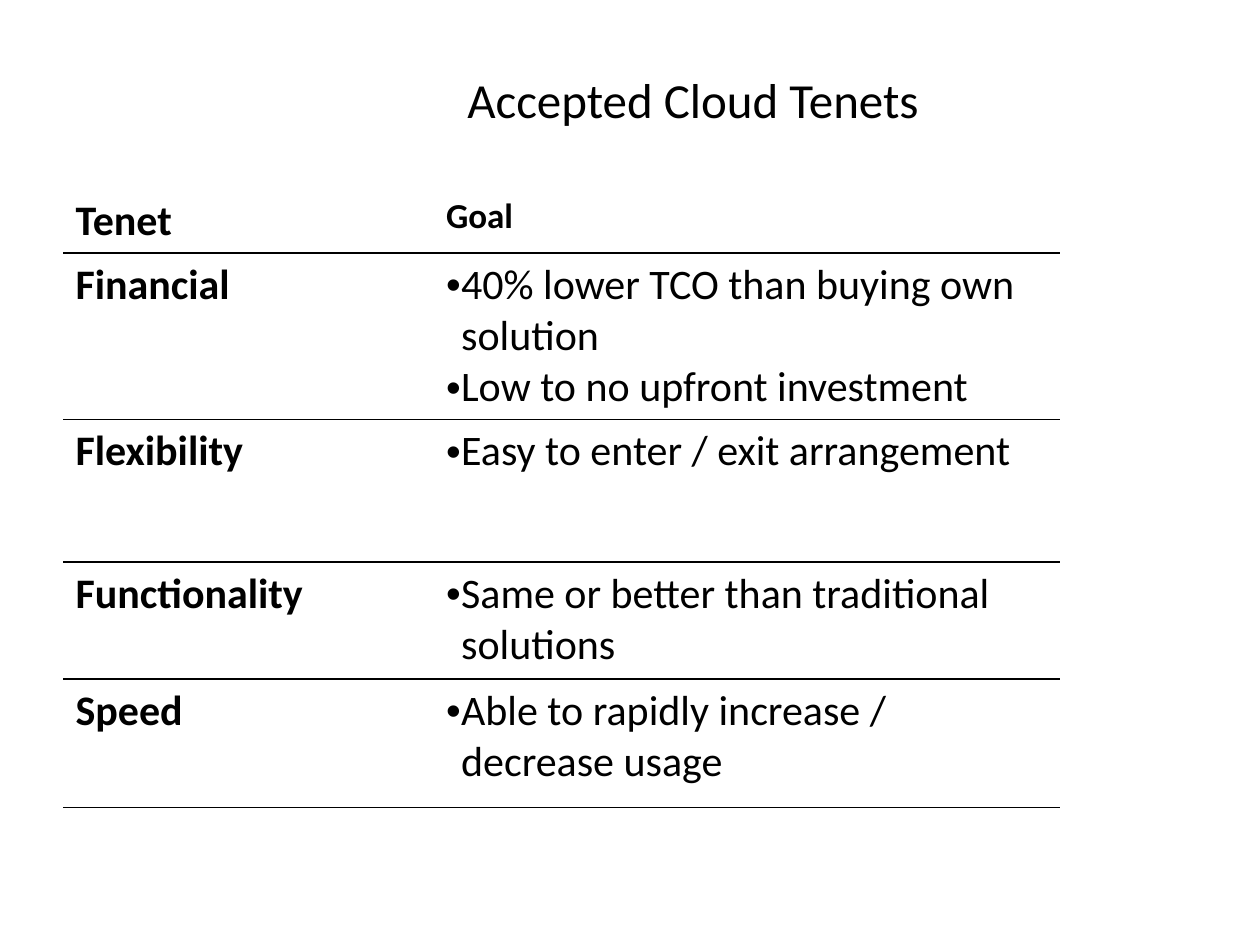
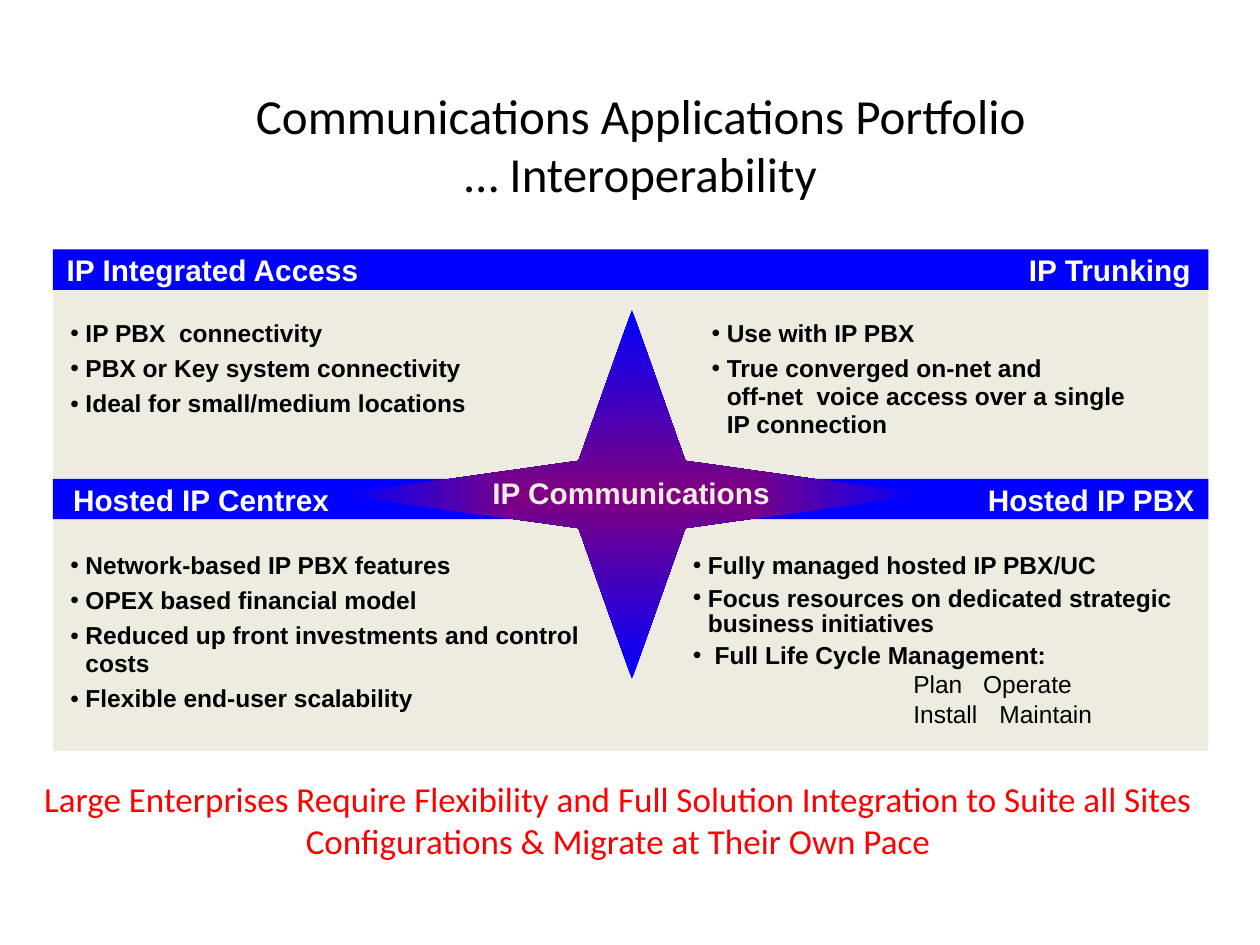
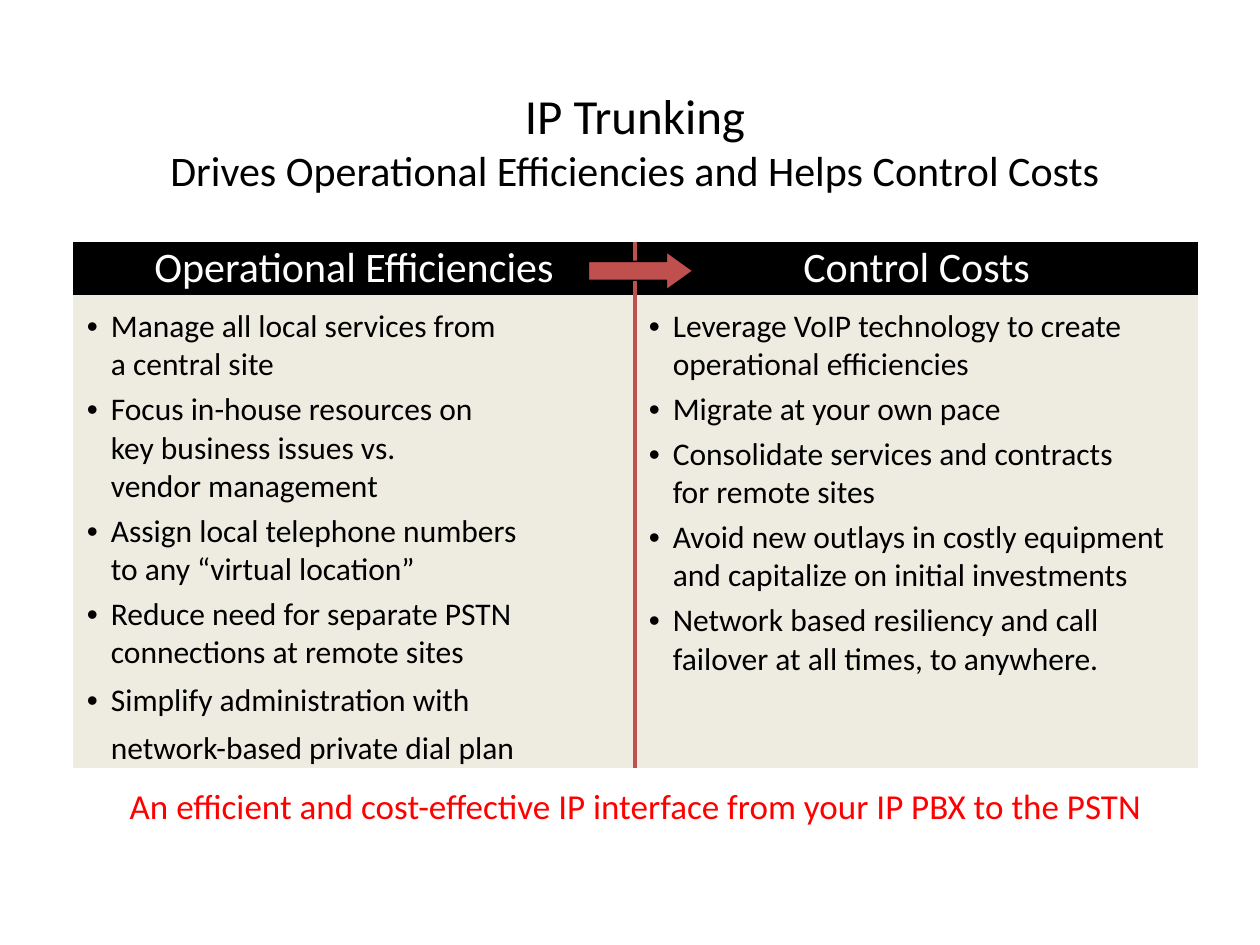
from dataclasses import dataclass, replace

from lxml import etree
from pptx import Presentation
from pptx.dml.color import RGBColor
from pptx.enum.shapes import MSO_SHAPE
from pptx.enum.text import MSO_ANCHOR, MSO_AUTO_SIZE, PP_ALIGN
from pptx.oxml.ns import qn
from pptx.slide import Slide
from pptx.table import Table, _Cell
from pptx.text.text import TextFrame, _Paragraph
from pptx.util import Inches, Pt

LEFT, CENTER, RIGHT = PP_ALIGN.LEFT, PP_ALIGN.CENTER, PP_ALIGN.RIGHT
TOP, MIDDLE, BOTTOM = MSO_ANCHOR.TOP, MSO_ANCHOR.MIDDLE, MSO_ANCHOR.BOTTOM
NO_FIT = MSO_AUTO_SIZE.NONE
RECT, STAR, ARROW = MSO_SHAPE.RECTANGLE, MSO_SHAPE.STAR_4_POINT, MSO_SHAPE.RIGHT_ARROW
PLAIN_GRID = "{2D5ABB26-0587-4C30-8999-92F81FD0307C}"

# The slide is a grid of 100 columns by 75 rows
WIDE, HIGH = Inches(10), Inches(7.5)
COLS = 100
UNIT = WIDE // COLS


@dataclass(frozen=True)
class Theme:
    black: str = "000000"
    white: str = "FFFFFF"
    sand: str = "EEECE1"
    blue: str = "0000FF"
    purple: str = "800080"
    red: str = "FF0000"
    brick: str = "C0504D"
    sans: str = "Calibri"
    block: str = "Arial"
    title: float = 28
    head: float = 24
    note: float = 20
    text: float = 18
    label: float = 17
    small: float = 14


THEME = Theme()


@dataclass(frozen=True)
class Box:
    left: float
    top: float
    wide: float
    high: float

    def place(self) -> tuple[int, int, int, int]:
        return grid(self.left), grid(self.top), grid(self.wide), grid(self.high)


@dataclass(frozen=True)
class Style:
    size: float
    color: str = THEME.black
    font: str = THEME.sans
    bold: bool = False
    align: PP_ALIGN = LEFT
    spread: float = 1.0   # line spacing
    lead: float = 0.0     # space before, as a share of the type size
    indent: float = 0.0
    hang: float = 0.0     # room for a bullet; none when zero
    tab: float = 0.0


@dataclass(frozen=True)
class Line:
    text: str
    style: Style


TITLE = Style(THEME.title, align=CENTER)
HEAD = Style(THEME.head, bold=True)
GOAL = Style(THEME.head, indent=1.2, hang=1.2)
LABEL = Style(THEME.label, THEME.white, THEME.block, True)
POINT = Style(THEME.small, font=THEME.block, bold=True, spread=0.95, lead=0.3,
              indent=1.2, hang=1.2)
TIGHT = replace(POINT, spread=0.85)
PHASE = Style(THEME.small, font=THEME.block, indent=17.5, tab=26.7)
BAND = Style(THEME.head, THEME.white, align=CENTER)
GAIN = Style(THEME.text, lead=0.2, indent=2.5, hang=1.9)
LOOSE = replace(GAIN, spread=1.25, lead=0)
NOTE = Style(THEME.note, THEME.red, align=CENTER)


def grid(units: float) -> int:
    return round(units * UNIT)


def rgb(color: str) -> RGBColor:
    return RGBColor.from_string(color)


def lines(style: Style, *texts: str) -> list[Line]:
    return [Line(text, style) for text in texts]


# Text
def fill_line(para: _Paragraph, line: Line, first: bool) -> None:
    style = line.style
    para.text = line.text
    props = para._p.get_or_add_pPr()
    if style.indent:
        props.set("marL", str(grid(style.indent)))
        props.set("indent", str(-grid(style.hang)))
    if style.hang:
        etree.SubElement(props, qn("a:buFont")).set("typeface", THEME.block)
        etree.SubElement(props, qn("a:buChar")).set("char", "•")
    if style.tab:
        stops = etree.SubElement(props, qn("a:tabLst"))
        stop = etree.SubElement(stops, qn("a:tab"))
        stop.set("pos", str(grid(style.tab)))
        stop.set("algn", "l")
    para.alignment = style.align
    para.line_spacing = style.spread
    para.space_before = Pt(0 if first else style.lead * style.size)
    font = para.font
    font.name, font.size, font.bold = style.font, Pt(style.size), style.bold
    font.color.rgb = rgb(style.color)


def write(frame: TextFrame, items: list[Line]) -> None:
    frame.word_wrap = True
    for i, line in enumerate(items):
        para = frame.add_paragraph() if i else frame.paragraphs[0]
        fill_line(para, line, i == 0)


def add_text(slide: Slide, box: Box, items: list[Line], flush: bool = False) -> None:
    frame = slide.shapes.add_textbox(*box.place()).text_frame
    if flush:
        frame.margin_left = frame.margin_right = 0
        frame.margin_top = frame.margin_bottom = 0
    write(frame, items)


def add_slide(deck, title: str, box: Box, anchor: MSO_ANCHOR) -> Slide:
    slide = deck.slides.add_slide(deck.slide_layouts[5])
    shape = slide.shapes.title
    shape.left, shape.top, shape.width, shape.height = box.place()
    frame = shape.text_frame
    frame.auto_size, frame.vertical_anchor = NO_FIT, anchor
    write(frame, lines(TITLE, title))
    return slide


# Shapes
def add_shape(slide: Slide, kind: MSO_SHAPE, box: Box, color: str, *bends: float):
    shape = slide.shapes.add_shape(kind, *box.place())
    shape.shadow.inherit = False
    shape.fill.solid()
    shape.fill.fore_color.rgb = rgb(color)
    shape.line.fill.background()
    for i, bend in enumerate(bends):
        shape.adjustments[i] = bend
    return shape


def glow(shape, inner: str, outer: str) -> None:
    shape.fill.gradient()
    for stop, color in zip(shape.fill.gradient_stops, (inner, outer)):
        stop.color.rgb = rgb(color)
    fill = shape._element.spPr.find(qn("a:gradFill"))
    fill.remove(fill.find(qn("a:lin")))
    shade = etree.SubElement(fill, qn("a:path"))
    shade.set("path", "shape")
    core = etree.SubElement(shade, qn("a:fillToRect"))
    for side in "ltrb":
        core.set(side, "50000")


# Tables
def add_table(slide: Slide, left: float, top: float,
              cols: list[float], rows: list[float]) -> Table:
    box = Box(left, top, sum(cols), sum(rows))
    table = slide.shapes.add_table(len(rows), len(cols), *box.place()).table
    table._tbl.tblPr.find(qn("a:tableStyleId")).text = PLAIN_GRID
    table.first_row = table.horz_banding = False
    for col, wide in zip(table.columns, cols):
        col.width = grid(wide)
    for row, high in zip(table.rows, rows):
        row.height = grid(high)
    return table


def add_edge(cell: _Cell, side: str, color: str, points: float) -> None:
    edge = etree.SubElement(cell._tc.get_or_add_tcPr(), qn(f"a:ln{side}"))
    edge.set("w", str(Pt(points)))
    fill = etree.SubElement(edge, qn("a:solidFill"))
    etree.SubElement(fill, qn("a:srgbClr")).set("val", color)


def paint(cell: _Cell, color: str = "") -> None:
    if color:
        cell.fill.solid()
        cell.fill.fore_color.rgb = rgb(color)
    else:
        cell.fill.background()


def pad(cell: _Cell, side: float, top: float) -> None:
    cell.margin_left = cell.margin_right = grid(side)
    cell.margin_top, cell.margin_bottom = grid(top), 0


# Slide 1: tenets and goals
TENETS = [
    ("Financial", ["40% lower TCO than buying own solution",
                   "Low to no upfront investment"]),
    ("Flexibility", ["Easy to enter / exit arrangement"]),
    ("Functionality", ["Same or better than traditional solutions"]),
    ("Speed", ["Able to rapidly increase / decrease usage"]),
]


def tenets(deck) -> None:
    slide = add_slide(deck, "Accepted Cloud Tenets", Box(15, 5, 80, 10.5), TOP)
    table = add_table(slide, 5, 15, [29.4, 49.7], [5.1, 13.2, 11.3, 9.3, 10.2])
    rows = [(lines(HEAD, "Tenet"), lines(replace(HEAD, size=THEME.note), "Goal"))]
    rows += [(lines(HEAD, name), lines(GOAL, *goals)) for name, goals in TENETS]
    for r, row in enumerate(rows):
        for c, items in enumerate(row):
            cell = table.cell(r, c)
            write(cell.text_frame, items)
            add_edge(cell, "B", THEME.black, 1)
            paint(cell)


# Slide 2: four services around a star
LABELS = [
    ("IP Integrated Access", Box(5.3, 20, 43, 2.8), LEFT),
    ("IP Trunking", Box(48.3, 20, 46.2, 2.8), RIGHT),
    ("Hosted IP Centrex", Box(5.8, 38.2, 43, 2.8), LEFT),
    ("Hosted IP PBX", Box(48.6, 38.2, 46.2, 2.8), RIGHT),
]
PANELS = [
    (Box(4.6, 24.9, 43.2, 11.9), lines(
        POINT, "IP PBX  connectivity", "PBX or Key system connectivity",
        "Ideal for small/medium locations")),
    (Box(55.5, 24.9, 38, 10.5), lines(
        POINT, "Use with IP PBX",
        "True converged on-net and\voff-net  voice access over a single\vIP connection")),
    (Box(4.6, 43.3, 43.8, 14.1), lines(
        POINT, "Network-based IP PBX features", "OPEX based financial model",
        "Reduced up front investments and control costs",
        "Flexible end-user scalability")),
    (Box(54, 43.3, 43.8, 15.2),
     lines(POINT, "Fully managed hosted IP PBX/UC")
     + lines(TIGHT, "Focus resources on dedicated strategic business initiatives",
             " Full Life Cycle Management:")
     + lines(PHASE, "Plan\t Operate", "Install\tMaintain")),
]


def services(deck) -> None:
    slide = add_slide(deck, "Communications Applications Portfolio\v… Interoperability",
                      Box(5, 5.8, 91.7, 10.8), BOTTOM)
    add_shape(slide, RECT, Box(4.2, 19.8, 91.7, 39.8), THEME.sand)
    for top in (38, 19.8):
        add_shape(slide, RECT, Box(4.2, top, 91.7, 3.2), THEME.blue)
    star = add_shape(slide, STAR, Box(35.5, 16, 29.3, 46.5), THEME.blue, 0.129)
    star.rotation = 90
    glow(star, THEME.purple, THEME.blue)
    for text, box, align in LABELS:
        add_text(slide, box, lines(replace(LABEL, align=align), text), flush=True)
    for box, items in PANELS:
        add_text(slide, box, items)
    core = replace(LABEL, color=THEME.sand, align=CENTER, spread=0.85)
    add_text(slide, Box(33.8, 37.6, 32.6, 3.4), lines(core, "IP Communications"))
    add_text(slide, Box(3.3, 61.7, 91.5, 5.1), lines(
        NOTE, "Large Enterprises Require Flexibility and Full Solution Integration "
        "to Suite all Sites Configurations & Migrate at Their Own Pace"), flush=True)


# Slide 3: gains in two columns
GAINS = [
    ("Operational Efficiencies",
     lines(GAIN, "Manage all local services from\va central site",
           "Focus in-house resources on\vkey business issues vs.\vvendor management",
           "Assign local telephone numbers\vto any “virtual location”",
           "Reduce need for separate PSTN connections at remote sites")
     + lines(LOOSE, "Simplify administration with\vnetwork-based private dial plan")),
    ("Control Costs",
     lines(GAIN, "Leverage VoIP technology to create operational efficiencies",
           "Migrate at your own pace",
           "Consolidate services and contracts\vfor remote sites",
           "Avoid new outlays in costly equipment and capitalize on initial investments",
           "Network based resiliency and call failover at all times, to anywhere.")),
]


def trunking(deck) -> None:
    slide = add_slide(
        deck, "IP Trunking\vDrives Operational Efficiencies and Helps Control Costs",
        Box(7.5, 5, 85.8, 10.6), MIDDLE)
    frame = slide.shapes.title.text_frame
    frame.margin_top = grid(2.1)
    frame.paragraphs[0].runs[1].font.size = Pt(THEME.head)

    table = add_table(slide, 5.8, 19.2, [44.6, 44.7], [4.2, 37.2, 6.2])
    for c, (name, gains) in enumerate(GAINS):
        head, body = table.cell(0, c), table.cell(1, c)
        write(head.text_frame, lines(BAND, name))
        write(body.text_frame, gains)
        head.vertical_anchor = MIDDLE
        pad(head, 0, 0)
        pad(body, 0.5, 1)
        for cell, color in ((head, THEME.black), (body, THEME.sand)):
            add_edge(cell, "RL"[c], THEME.brick, 2.25)
            paint(cell, color)
    foot = table.cell(2, 0)
    foot.merge(table.cell(2, 1))
    foot.vertical_anchor = MIDDLE
    pad(foot, 0, 0)
    write(foot.text_frame, lines(
        NOTE, "An efficient and cost-effective IP interface from your IP PBX to the PSTN"))
    paint(foot)

    arrow = add_shape(slide, ARROW, Box(46.7, 20, 8.3, 3), THEME.brick, 0.5, 0.698)
    arrow.line.color.rgb = rgb(THEME.black)
    arrow.line.width = Pt(0.75)


def main() -> None:
    deck = Presentation()
    deck.slide_width, deck.slide_height = WIDE, HIGH
    for build in (tenets, services, trunking):
        build(deck)
    deck.save("out.pptx")


if __name__ == "__main__":
    main()
